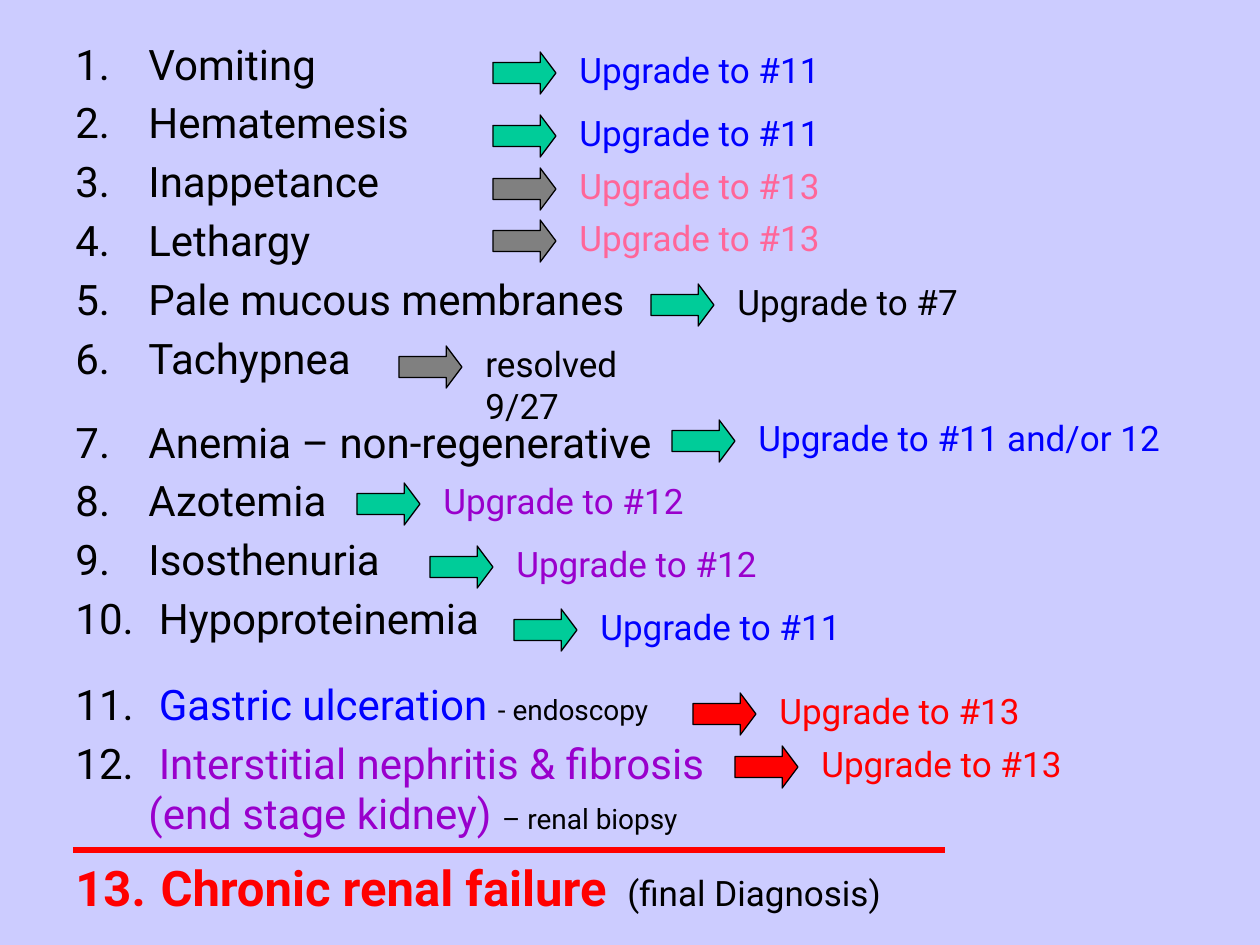
from lxml import etree
from pptx import Presentation, util as u
from pptx.dml.color import RGBColor
from pptx.enum import shapes, text
from pptx.oxml.ns import qn

BLACK, BLUE, PURPLE, RED = "000000", "0000FF", "9900CC", "FF0000"
GREEN, GRAY, PINK = "00CC99", "808080", "FF6699"
BODY = {"size": u.Pt(24), "name": "Roboto", "bold": False}
LABEL = {**BODY, "size": u.Pt(20)}
DETAIL = {**BODY, "size": u.Pt(16)}
DIAGNOSIS = {**BODY, "size": u.Pt(28), "bold": True}

PROBLEMS = [
    (1, (63, 32, 693, 441), [
        [(problem, BODY, BLACK)] for problem in
        ("Vomiting", "Hematemesis", "Inappetance", "Lethargy",
         "Pale mucous membranes", "Tachypnea")]),
    (7, (63, 410, 735, 305), [
        [(problem, BODY, BLACK)] for problem in
        ("Anemia – non-regenerative", "Azotemia", "Isosthenuria",
         " Hypoproteinemia")]),
    (11, (63, 672, 714, 210), [
        [(" ", BODY, BLACK), ("Gastric ulceration ", BODY, BLUE),
         ("- endoscopy", DETAIL, BLACK)],
        [(" ", BODY, BLACK),
         ("Interstitial nephritis & fibrosis\n(end stage kidney) ", BODY, PURPLE),
         ("– renal biopsy", DETAIL, BLACK)]]),
    (13, (63, 851, 1008, 84), [
        [(" Chronic renal failure ", DIAGNOSIS, RED),
         (" (final Diagnosis)", LABEL, BLACK)]]),
]

OUTCOMES = [
    [(672, 420, 483, GREEN, "Upgrade to #11 and/or 12", BLUE),
     (514, 609, 378, GREEN, "Upgrade to #11", BLUE)],
    [(357, 483, 378, GREEN, "Upgrade to #12", PURPLE),
     (430, 546, 378, GREEN, "Upgrade to #12", PURPLE)],
    [(493, 52, 378, GREEN, "Upgrade to #11", BLUE),
     (493, 115, 378, GREEN, "Upgrade to #11", BLUE)],
    [(735, 746, 315, RED, "Upgrade to #13", RED),
     (693, 693, 315, RED, "Upgrade to #13", RED)],
    [(651, 284, 315, GREEN, "Upgrade to #7", BLACK)],
    [(493, 168, 315, GRAY, "Upgrade to #13", PINK),
     (493, 220, 315, GRAY, "Upgrade to #13", PINK)],
    [(399, 346, 247, GRAY, "resolved\n9/27", BLACK)],
]


def px(*lengths):
    return [u.Emu(length * 914400 // 126) for length in lengths]


def color(value):
    return RGBColor.from_string(value)


def write(paragraph, runs):
    for words, style, ink in runs:
        for index, line in enumerate(words.split("\n")):
            if index:
                paragraph.add_line_break()
            run = paragraph.add_run()
            run.text = line
            for key, value in style.items():
                setattr(run.font, key, value)
            run.font.color.rgb = color(ink)


def add_text(parent, box, paragraphs):
    frame = parent.add_textbox(*px(*box)).text_frame
    frame.word_wrap = True
    frame.vertical_anchor = text.MSO_ANCHOR.TOP
    for index, runs in enumerate(paragraphs):
        paragraph = frame.add_paragraph() if index else frame.paragraphs[0]
        write(paragraph, runs)
    return frame


def number(paragraph, start):
    properties = paragraph._p.get_or_add_pPr()
    indent = px(73)[0]
    properties.set("marL", str(indent))
    properties.set("indent", str(-indent))
    before = etree.SubElement(properties, qn("a:spcBef"))
    etree.SubElement(before, qn("a:spcPct")).set("val", "20000")
    bullet = etree.SubElement(properties, qn("a:buAutoNum"))
    bullet.set("type", "arabicPeriod")
    if start > 1:
        bullet.set("startAt", str(start))


def add_problems(slide, start, box, problems):
    for paragraph in add_text(slide.shapes, box, problems).paragraphs:
        number(paragraph, start)


def add_outcome(parent, left, top, width, fill, words, ink):
    arrow = parent.add_shape(shapes.MSO_SHAPE.RIGHT_ARROW, *px(left, top, 63, 42))
    arrow.adjustments[0], arrow.adjustments[1] = 0.5, 0.375
    arrow.shadow.inherit = False
    arrow.fill.solid()
    arrow.fill.fore_color.rgb = color(fill)
    arrow.line.color.rgb = color(BLACK)
    arrow.line.width = u.Pt(0.75)
    add_text(parent, (left + 74, top - 10, width, 54), [[(words, LABEL, ink)]])


def add_divider(slide, left, right, top):
    divider = slide.shapes.add_connector(
        shapes.MSO_CONNECTOR.STRAIGHT, *px(left, top, right, top))
    divider.line.color.rgb = color(RED)
    divider.line.width = u.Pt(3)
    etree.SubElement(divider._element.spPr, qn("a:effectLst"))


def main():
    deck = Presentation()
    deck.slide_width, deck.slide_height = px(1260, 945)
    slide = deck.slides.add_slide(deck.slide_layouts[6])
    slide.background.fill.solid()
    slide.background.fill.fore_color.rgb = color("CCCCFF")
    for start, box, problems in PROBLEMS:
        add_problems(slide, start, box, problems)
    for outcomes in OUTCOMES:
        group = slide.shapes.add_group_shape()
        for outcome in outcomes:
            add_outcome(group.shapes, *outcome)
    add_divider(slide, 73, 945, 850)
    deck.save("out.pptx")


if __name__ == "__main__":
    main()
